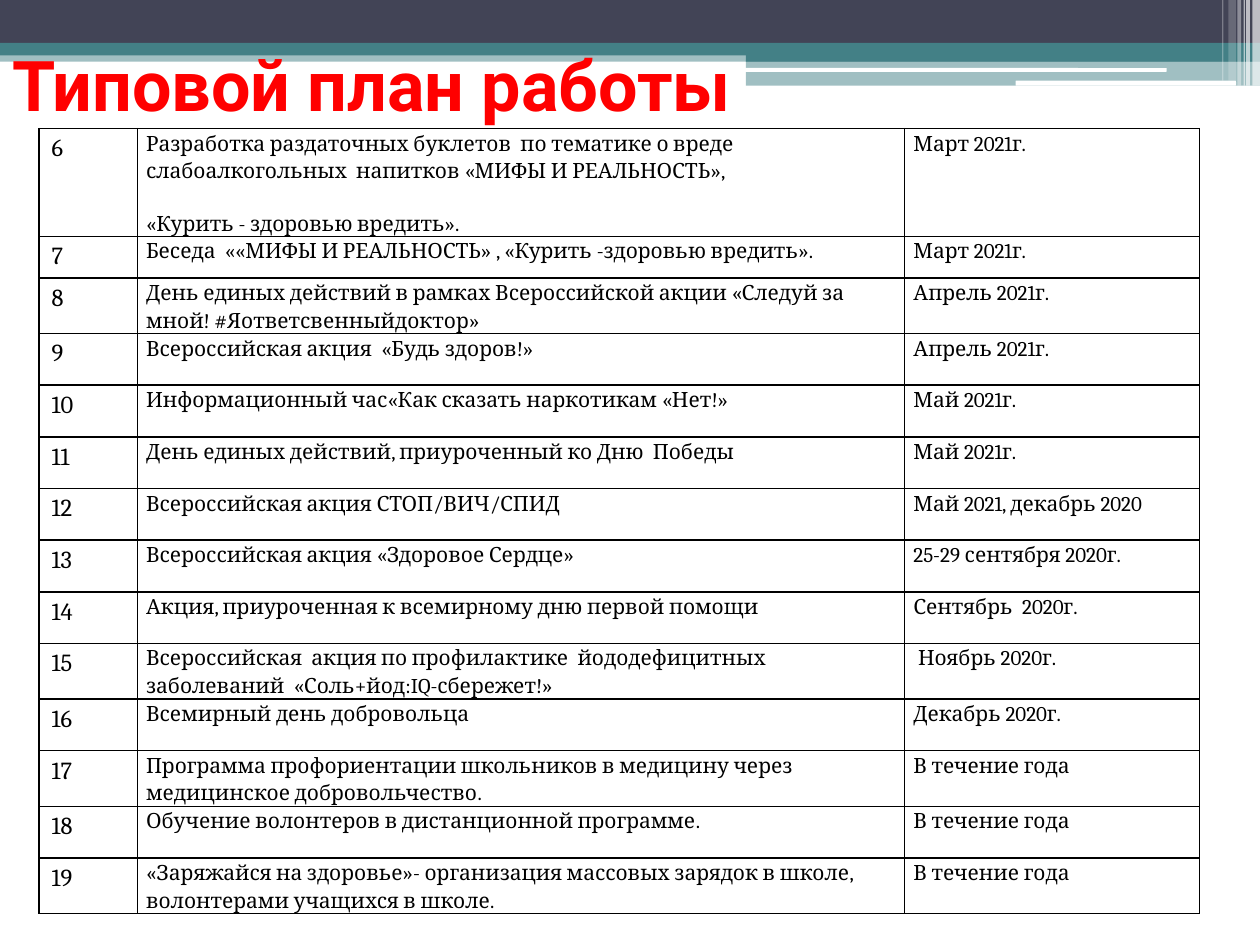
import pptx
import pptx.util
from lxml import etree
from pptx.dml.color import RGBColor
from pptx.enum.shapes import MSO_SHAPE
from pptx.enum.text import MSO_ANCHOR, PP_ALIGN
from pptx.oxml.ns import qn
from pptx.util import Inches, Pt

NAVY = RGBColor(0x42, 0x44, 0x56)
TEAL = RGBColor(0x43, 0x80, 0x86)
WHITE = RGBColor(0xFF, 0xFF, 0xFF)
RED = RGBColor(0xFF, 0, 0)
BLACK = RGBColor(0, 0, 0)

TITLE = "Типовой план работы"
FIRST_NUMBER = 6
EVENTS = [  # paragraphs of the description, date
    (["Разработка раздаточных буклетов  по тематике о вреде слабоалкогольных  напитков «МИФЫ И РЕАЛЬНОСТЬ»,",
      "«Курить - здоровью вредить»."], "Март 2021г."),
    (["Беседа  ««МИФЫ И РЕАЛЬНОСТЬ» , «Курить -здоровью вредить»."], "Март 2021г."),
    (["День единых действий в рамках Всероссийской акции «Следуй за мной! #Яответсвенныйдоктор»"], "Апрель 2021г."),
    (["Всероссийская акция  «Будь здоров!»"], "Апрель 2021г."),
    (["Информационный час«Как сказать наркотикам «Нет!»"], "Май 2021г."),
    (["День единых действий, приуроченный ко Дню  Победы"], "Май 2021г."),
    (["Всероссийская акция СТОП/ВИЧ/СПИД"], "Май 2021, декабрь 2020"),
    (["Всероссийская акция «Здоровое Сердце»"], "25-29 сентября 2020г."),
    (["Акция, приуроченная к всемирному дню первой помощи"], "Сентябрь  2020г."),
    (["Всероссийская  акция по профилактике  йододефицитных заболеваний  «Соль+йод:IQ-сбережет!»"], " Ноябрь 2020г."),
    (["Всемирный день добровольца"], "Декабрь 2020г."),
    (["Программа профориентации школьников в медицину через  медицинское добровольчество."], "В течение года"),
    (["Обучение волонтеров в дистанционной программе."], "В течение года"),
    (["«Заряжайся на здоровье»- организация массовых зарядок в школе, волонтерами учащихся в школе."],
     "В течение года"),
]
COLUMN_WIDTHS = [0.78, 6.09, 2.34]
ROW_HEIGHTS = [0.55, 0.33] + [0.41] * (len(EVENTS) - 2)

RECT, ROUND = MSO_SHAPE.RECTANGLE, MSO_SHAPE.ROUNDED_RECTANGLE
BANDS = [  # shape, left, top, width, height, colour, opacity %
    (RECT, 0, 0.4, 10, 0.09, TEAL, 50),
    (RECT, 0, 0, 10, 0.34, NAVY, 100),
    (RECT, 0, 0.34, 10, 0.1, TEAL, 100),
    (RECT, 5.92, 0.39, 4.08, 0.1, TEAL, 100),
    (RECT, 5.92, 0.48, 4.08, 0.2, TEAL, 50),
    (ROUND, 5.91, 0.54, 3.35, 0.03, WHITE, 100),
    (ROUND, 8.06, 0.64, 1.75, 0.04, WHITE, 100),
]
STRIPES = [  # left, width, height, opacity %
    (9.94, 0.06, 0.68, 65), (9.89, 0.03, 0.68, 65), (9.87, 0.01, 0.68, 60),
    (9.82, 0.03, 0.68, 40), (9.75, 0.06, 0.64, 20), (9.7, 0.01, 0.64, 30),
]


def add_band(s, kind, left, top, width, height, color, opacity):
    sp = s.shapes.add_shape(kind, Inches(left), Inches(top), Inches(width), Inches(height))
    sp.shadow.inherit = False
    sp.line.fill.background()
    sp.fill.solid()
    sp.fill.fore_color.rgb = color
    if opacity < 100:
        clr = sp.fill._xPr.find(qn("a:solidFill"))[0]
        etree.SubElement(clr, qn("a:alpha"), val=str(opacity * 1000))


def add_borders(cell):
    tc_pr = cell._tc.get_or_add_tcPr()
    for i, side in enumerate(("lnL", "lnR", "lnT", "lnB")):
        ln = etree.Element(qn("a:" + side), w=str(Pt(1)))
        fill = etree.SubElement(ln, qn("a:solidFill"))
        etree.SubElement(fill, qn("a:srgbClr"), val=str(BLACK))
        tc_pr.insert(i, ln)


def add_run(p, text, font, size, color, bold=False):
    r = p.add_run()
    r.text = text
    r.font.name, r.font.size, r.font.bold = font, Pt(size), bold
    r.font.color.rgb = color


def fill_cell(cell, paragraphs, is_number):
    cell.fill.background()
    add_borders(cell)
    if not is_number:
        cell.margin_left = cell.margin_right = Inches(0.07)
        cell.margin_top = cell.margin_bottom = 0
    tf = cell.text_frame
    for i, text in enumerate(paragraphs):
        p = tf.add_paragraph() if i else tf.paragraphs[0]
        if not is_number:
            p.line_spacing = 1.15
        if i:
            p.space_before = Pt(14)
        add_run(p, text, "Cambria", 14 if is_number else 12, BLACK)


def add_plan(s):
    table = s.shapes.add_table(len(EVENTS), len(COLUMN_WIDTHS), Inches(0.31), Inches(1.02),
                               Inches(sum(COLUMN_WIDTHS)), Inches(sum(ROW_HEIGHTS))).table
    table.first_row = table.horz_banding = False
    for column, width in zip(table.columns, COLUMN_WIDTHS):
        column.width = Inches(width)
    for row, height in zip(table.rows, ROW_HEIGHTS):
        row.height = Inches(height)
    for i, (description, date) in enumerate(EVENTS):
        for j, paragraphs in enumerate(([str(FIRST_NUMBER + i)], description, [date])):
            fill_cell(table.cell(i, j), paragraphs, is_number=j == 0)


def add_title(s):
    title = s.shapes.title
    s.shapes._spTree.append(title._element)  # in front of the bands
    title.left, title.top = Inches(0), Inches(0.23)
    title.width, title.height = Inches(9), Inches(0.86)
    tf = title.text_frame
    tf.word_wrap = True
    tf.vertical_anchor = MSO_ANCHOR.MIDDLE
    p = tf.paragraphs[0]
    p.alignment = PP_ALIGN.LEFT
    add_run(p, TITLE, "Roboto", 40, RED, bold=True)


def main():
    prs = pptx.Presentation()
    prs.slide_width, prs.slide_height = Inches(10), Inches(7.5)
    s = prs.slides.add_slide(prs.slide_layouts[5])
    for band in BANDS:
        add_band(s, *band)
    for left, width, height, opacity in STRIPES:
        add_band(s, RECT, left, 0, width, height, WHITE, opacity)
    add_title(s)
    add_plan(s)
    prs.save("out.pptx")


if __name__ == "__main__":
    main()
